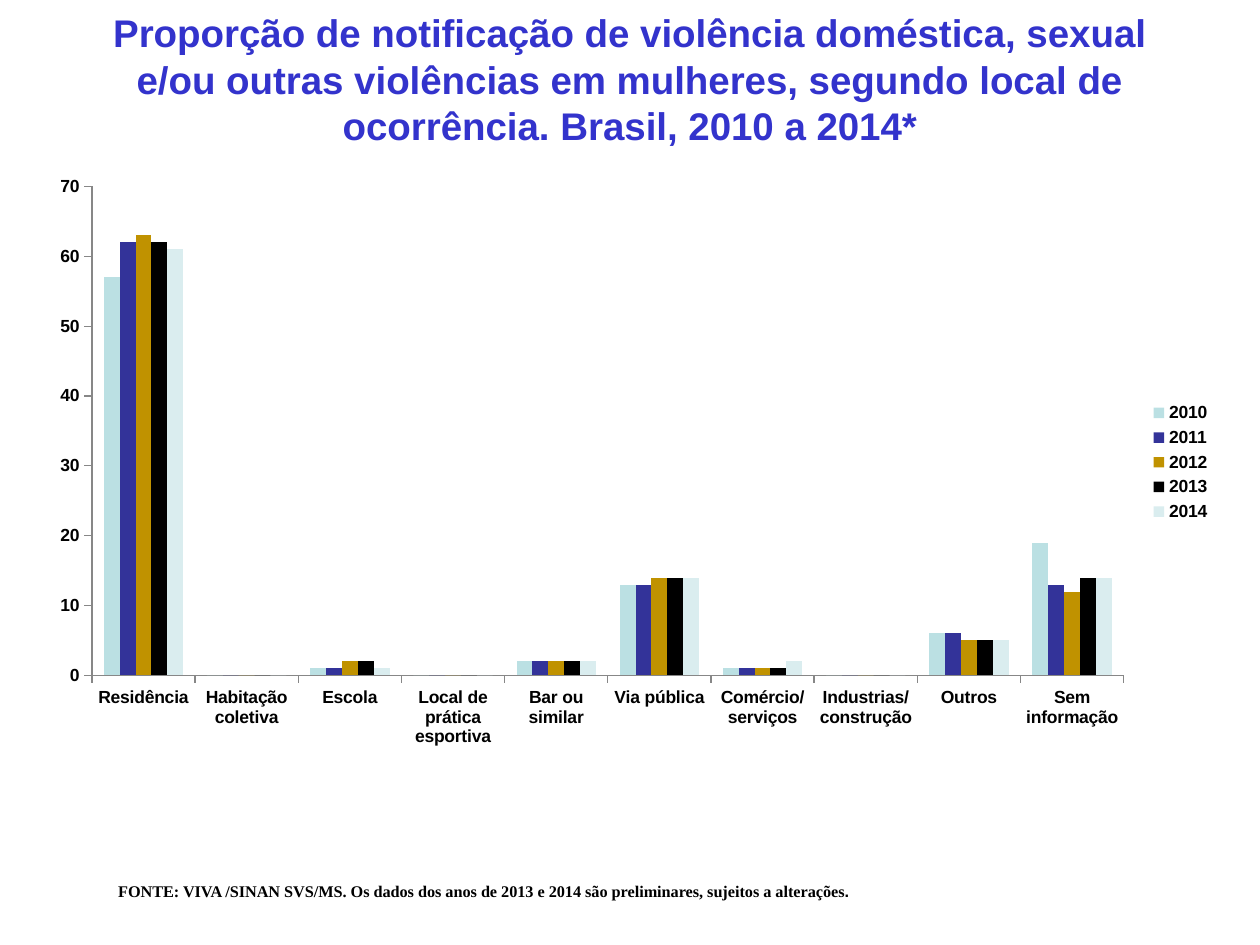
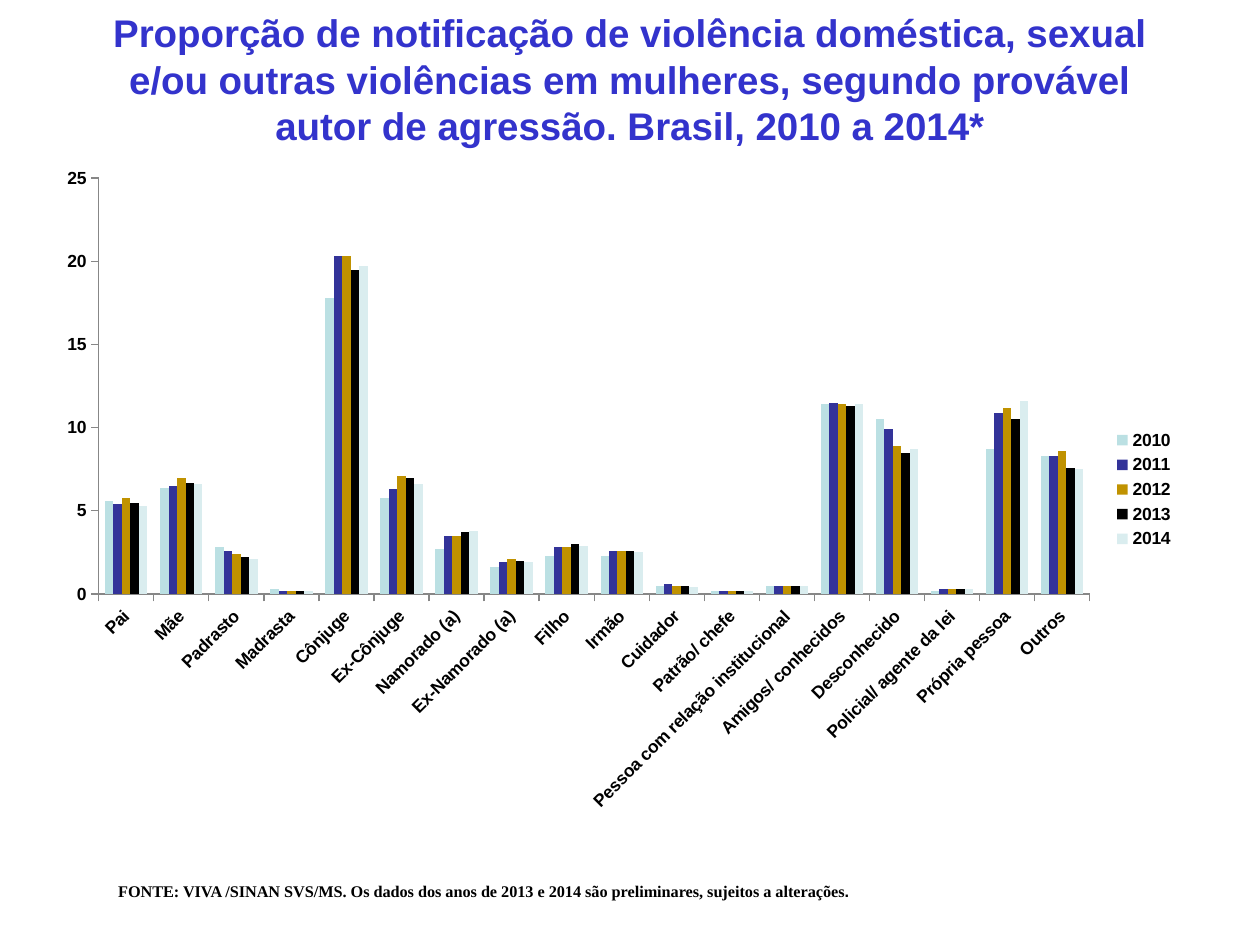
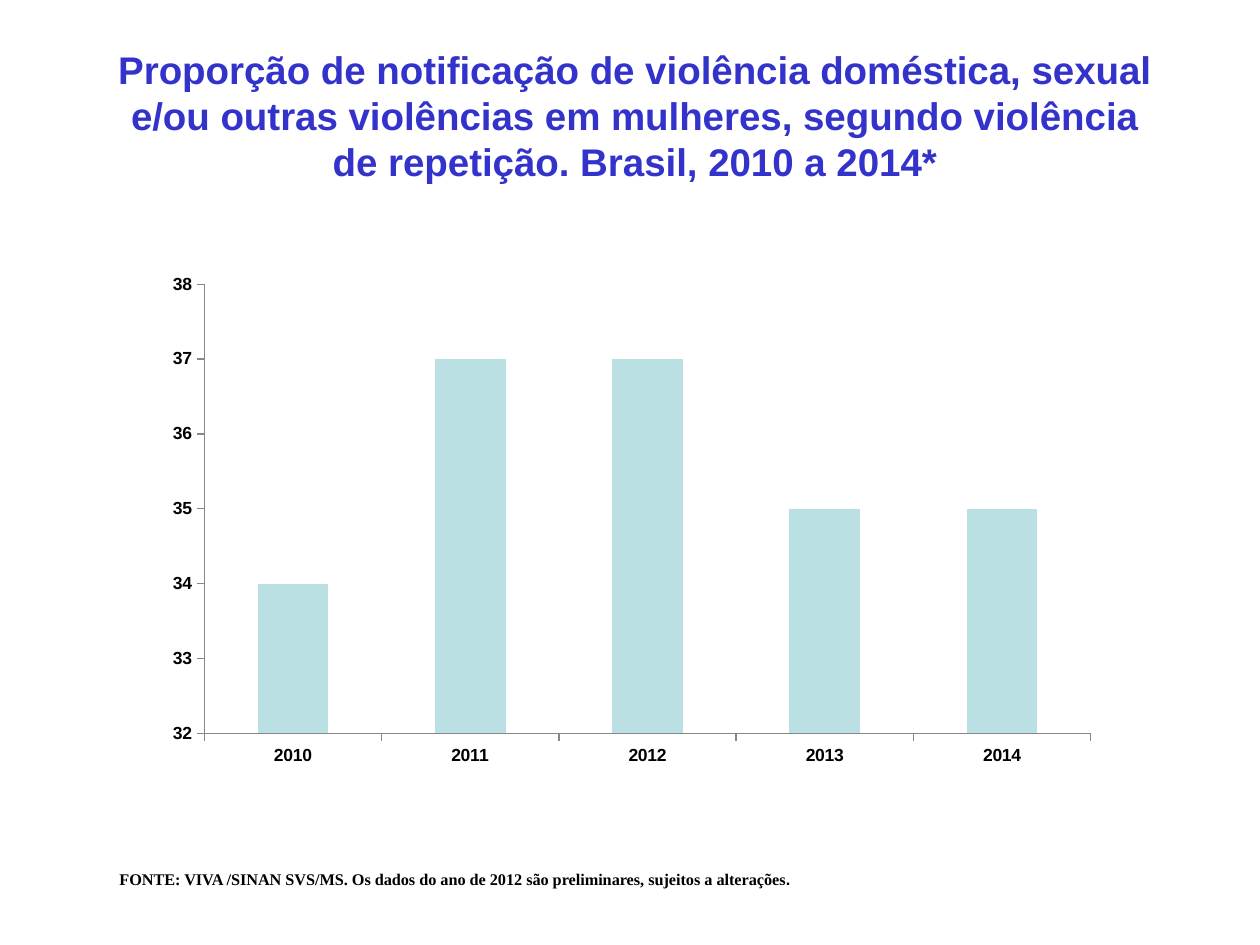
from dataclasses import dataclass

from lxml.etree import SubElement
from pptx import Presentation
from pptx.chart.data import CategoryChartData
from pptx.dml.color import RGBColor
from pptx.enum.chart import XL_CHART_TYPE, XL_LEGEND_POSITION, XL_TICK_MARK
from pptx.enum.text import MSO_ANCHOR, MSO_AUTO_SIZE, PP_ALIGN
from pptx.oxml.ns import qn
from pptx.util import Pt


@dataclass(frozen=True)
class Theme:
    sans: str = "Arial"
    serif: str = "Times New Roman"
    title: str = "3333CC"
    ink: str = "000000"
    axis: str = "878787"
    bars: tuple = ("BBE0E3", "333399", "C09200", "000000", "DAEDEF")
    title_size: float = 22
    source_size: float = 16
    chart_size: float = 10


THEME = Theme()
TITLE = ("Proporção de notificação de violência doméstica, sexual e/ou outras "
         "violências em mulheres, segundo {}. Brasil, 2010 a 2014*")
SOURCE = "FONTE: VIVA /SINAN SVS/MS. Os dados {} são preliminares, sujeitos a alterações"
YEARS = ["2010", "2011", "2012", "2013", "2014"]

SLIDES = [
    dict(
        topic="local de ocorrência",
        period="dos anos de 2013 e 2014",
        title_box=(54, 0, 612, 90),
        source_box=(60.5, 498.2, 501.1, 39.6),
        chart_box=(20.9, 94.3, 678.2, 339.8),
        plot_box=(52.5, 106.6, 589.7, 279.4),
        scale=(0, 70, 10),
        rotation=0,
        names=YEARS,
        rows=[
            ("Residência", 57, 62, 63, 62, 61),
            ("Habitação coletiva", 0, 0, 0, 0, 0),
            ("Escola", 1, 1, 2, 2, 1),
            ("Local de prática esportiva", 0, 0, 0, 0, 0),
            ("Bar ou similar", 2, 2, 2, 2, 2),
            ("Via pública", 13, 13, 14, 14, 14),
            ("Comércio/ serviços", 1, 1, 1, 1, 2),
            ("Industrias/ construção", 0, 0, 0, 0, 0),
            ("Outros", 6, 6, 5, 5, 5),
            ("Sem informação", 19, 13, 12, 14, 14),
        ],
    ),
    dict(
        topic="provável autor de agressão",
        period="dos anos de 2013 e 2014",
        title_box=(54, 0, 612, 90),
        source_box=(60.5, 498.2, 501.1, 39.6),
        chart_box=(25.2, 88.6, 653, 382.3),
        plot_box=(56.4, 101.8, 566.3, 237.7),
        scale=(0, 25, 5),
        rotation=-45,
        names=YEARS,
        rows=[
            ("Pai", 5.6, 5.4, 5.8, 5.5, 5.3),
            ("Mãe", 6.4, 6.5, 7, 6.7, 6.6),
            ("Padrasto", 2.8, 2.6, 2.4, 2.2, 2.1),
            ("Madrasta", 0.3, 0.2, 0.2, 0.2, 0.2),
            ("Cônjuge", 17.8, 20.3, 20.3, 19.5, 19.7),
            ("Ex-Cônjuge", 5.8, 6.3, 7.1, 7, 6.6),
            ("Namorado (a)", 2.7, 3.5, 3.5, 3.7, 3.8),
            ("Ex-Namorado (a)", 1.6, 1.9, 2.1, 2, 1.9),
            ("Filho", 2.3, 2.8, 2.8, 3, 2.9),
            ("Irmão", 2.3, 2.6, 2.6, 2.6, 2.5),
            ("Cuidador", 0.5, 0.6, 0.5, 0.5, 0.4),
            ("Patrão/ chefe", 0.2, 0.2, 0.2, 0.2, 0.2),
            ("Pessoa com relação institucional", 0.5, 0.5, 0.5, 0.5, 0.5),
            ("Amigos/ conhecidos", 11.4, 11.5, 11.4, 11.3, 11.4),
            ("Desconhecido", 10.5, 9.9, 8.9, 8.5, 8.7),
            ("Policial/ agente da lei", 0.2, 0.3, 0.3, 0.3, 0.3),
            ("Própria pessoa", 8.7, 10.9, 11.2, 10.5, 11.6),
            ("Outros", 8.3, 8.3, 8.6, 7.6, 7.5),
        ],
    ),
    dict(
        topic="violência de repetição",
        period="do ano de 2012",
        title_box=(56.9, 20.9, 612, 90),
        source_box=(61.2, 491, 460.8, 39.6),
        chart_box=(87.8, 151.2, 546.5, 292.3),
        plot_box=(116.8, 162.4, 506.5, 256.8),
        scale=(32, 38, 1),
        rotation=0,
        names=["Series 1"],
        rows=list(zip(YEARS, (34, 37, 37, 35, 35))),
    ),
]


def points(box):
    return [Pt(v) for v in box]


def style_font(font, name, size, color):
    font.name = name
    font.size = Pt(size)
    font.bold = True
    font.color.rgb = RGBColor.from_string(color)


def add_text(slide, box, runs, *, size, color, align=PP_ALIGN.LEFT,
             anchor=MSO_ANCHOR.TOP, wrap=True, baseline=None):
    tf = slide.shapes.add_textbox(*points(box)).text_frame
    tf.word_wrap = wrap
    tf.auto_size = MSO_AUTO_SIZE.NONE if wrap else MSO_AUTO_SIZE.SHAPE_TO_FIT_TEXT
    tf.vertical_anchor = anchor
    p = tf.paragraphs[0]
    p.alignment = align
    for text, name in runs:
        r = p.add_run()
        r.text = text
        style_font(r.font, name, size, color)
        if baseline:
            r.font._element.set("baseline", str(baseline * 1000))


def place_plot(chart, chart_box, plot_box):
    left, top, width, height = chart_box
    x, y, w, h = plot_box
    shares = ((x - left) / width, (y - top) / height, w / width, h / height)
    area = chart._chartSpace.chart.plotArea
    for old in area.findall(qn("c:layout")):
        area.remove(old)
    layout = SubElement(area, qn("c:layout"))
    area.insert(0, layout)
    manual = SubElement(layout, qn("c:manualLayout"))
    settings = [("layoutTarget", "inner"), ("xMode", "edge"), ("yMode", "edge")]
    for tag, value in settings + list(zip("xywh", shares)):
        SubElement(manual, qn(f"c:{tag}")).set("val", str(value))


def add_columns(slide, spec):
    data = CategoryChartData()
    labels, *columns = zip(*spec["rows"])
    data.categories = labels
    for name, values in zip(spec["names"], columns):
        data.add_series(name, values)
    chart = slide.shapes.add_chart(
        XL_CHART_TYPE.COLUMN_CLUSTERED, *points(spec["chart_box"]), data).chart
    chart.has_title = False
    style_font(chart.font, THEME.sans, THEME.chart_size, THEME.ink)
    chart.has_legend = len(columns) > 1
    if chart.has_legend:
        chart.legend.position = XL_LEGEND_POSITION.RIGHT
        chart.legend.include_in_layout = False

    bars = chart.plots[0]
    bars.gap_width = 150
    bars.overlap = 0
    bars.vary_by_categories = False
    for series, color in zip(bars.series, THEME.bars):
        series.format.fill.solid()
        series.format.fill.fore_color.rgb = RGBColor.from_string(color)

    for axis in (chart.category_axis, chart.value_axis):
        axis.has_major_gridlines = False
        axis.major_tick_mark = XL_TICK_MARK.OUTSIDE
        axis.format.line.width = Pt(0.75)
        axis.format.line.color.rgb = RGBColor.from_string(THEME.axis)
        style_font(axis.tick_labels.font, THEME.sans, THEME.chart_size, THEME.ink)
    body = chart.category_axis._element.get_or_add_txPr().bodyPr
    body.set("rot", str(spec["rotation"] * 60000))
    axis = chart.value_axis
    axis.minimum_scale, axis.maximum_scale, axis.major_unit = spec["scale"]
    place_plot(chart, spec["chart_box"], spec["plot_box"])


def main():
    prs = Presentation()
    prs.slide_width, prs.slide_height = Pt(720), Pt(540)
    for spec in SLIDES:
        slide = prs.slides.add_slide(prs.slide_layouts[6])
        add_text(slide, spec["title_box"],
                 [(TITLE.format(spec["topic"]), THEME.sans)],
                 size=THEME.title_size, color=THEME.title,
                 align=PP_ALIGN.CENTER, anchor=MSO_ANCHOR.MIDDLE)
        add_text(slide, spec["source_box"],
                 [(SOURCE.format(spec["period"]), THEME.serif), (".", THEME.sans)],
                 size=THEME.source_size, color=THEME.ink, wrap=False, baseline=30)
        add_columns(slide, spec)
    prs.save("out.pptx")


if __name__ == "__main__":
    main()
